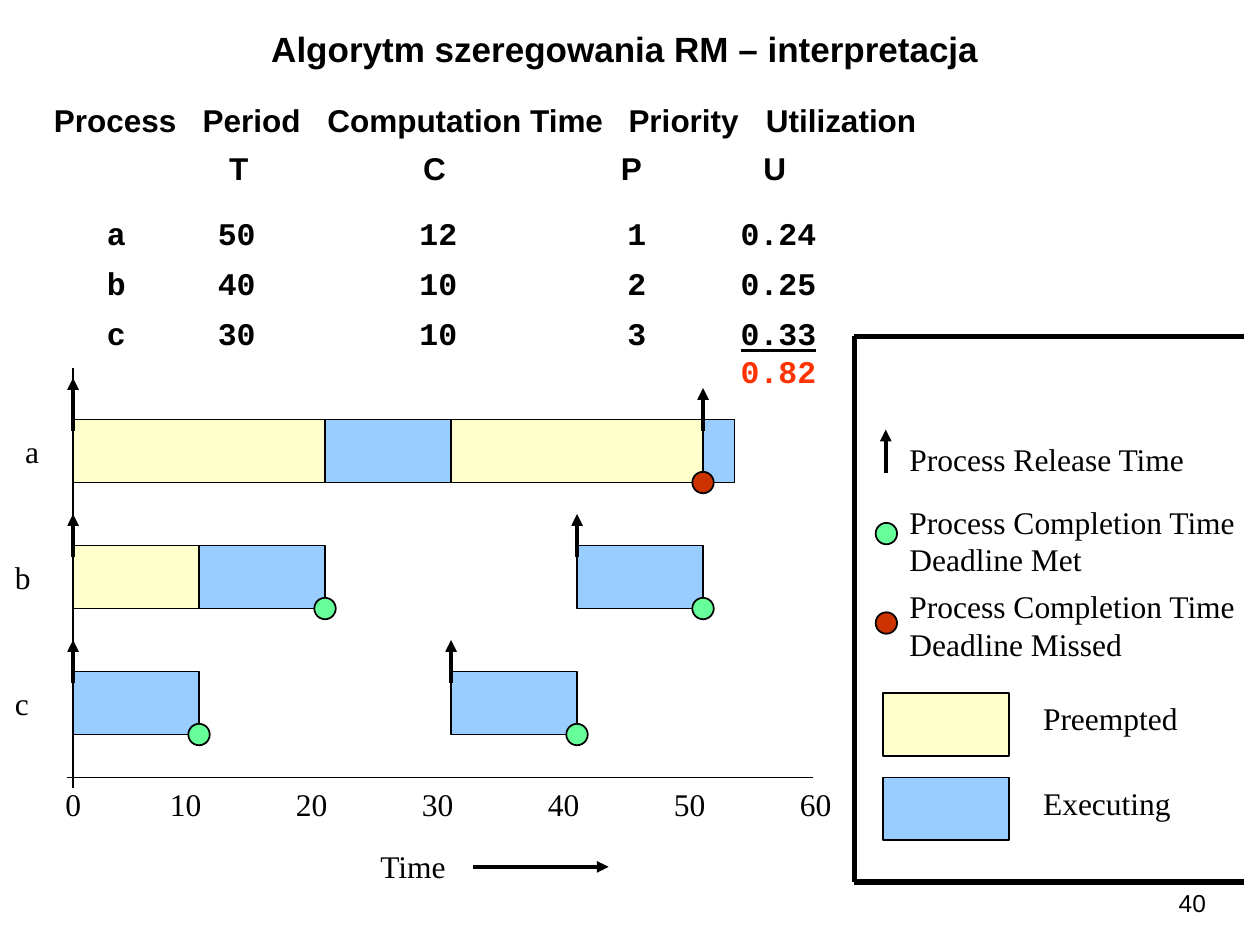
from lxml import etree
from pptx import Presentation
from pptx import util as u
from pptx.dml.color import RGBColor
from pptx.enum import shapes, text
from pptx.oxml.ns import qn

COLORS = {
    "ink": "000000",
    "preempted": "FFFFCC",
    "executing": "99CCFF",
    "met": "66FF99",
    "missed": "CC3300",
    "total": "FF3300",
}
SERIF, SANS, MONO = "Times New Roman", "Arial", "Courier New"
ORIGIN = 0.58
BAR_HEIGHT = 0.5
DOT_SIZE = 0.17
ROWS = {"a": 3.33, "b": 4.33, "c": 5.33}
BARS = [
    ("a", 0, 20, "preempted"),
    ("a", 20, 10, "executing"),
    ("a", 30, 20, "preempted"),
    ("a", 50, 2.5, "executing"),
    ("b", 0, 10, "preempted"),
    ("b", 10, 10, "executing"),
    ("b", 40, 10, "executing"),
    ("c", 0, 10, "executing"),
    ("c", 30, 10, "executing"),
]
RELEASES = [("a", 0), ("a", 50), ("b", 0), ("b", 40), ("c", 0), ("c", 30)]
COMPLETIONS = [
    ("a", 50, "missed"),
    ("b", 20, "met"),
    ("b", 50, "met"),
    ("c", 10, "met"),
    ("c", 40, "met"),
]
HEADING_STOPS = [1.18, 2.17, 4.56, 5.65]
SYMBOL_STOPS = [1.39, 2.93, 4.5, 5.63]
VALUE_STOPS = [0.42, 1.3, 2.9, 4.55, 5.45]
PROCESS_TABLE = [
    ("Process\tPeriod\tComputation Time\tPriority\tUtilization", SANS, 0, HEADING_STOPS),
    ("\tT\tC\tP\tU", SANS, 6, SYMBOL_STOPS),
    ("\ta\t50\t12\t1\t0.24", MONO, 15.5, VALUE_STOPS),
    ("\tb\t40\t10\t2\t0.25", MONO, 7, VALUE_STOPS),
    ("\tc\t30\t10\t3\t", MONO, 7, VALUE_STOPS),
    ("\t0.82", MONO, 0, VALUE_STOPS[-1:]),
]


def color(name):
    return RGBColor.from_string(COLORS[name])


def time_x(time):
    return ORIGIN + time / 10


def style(paragraph, font=SERIF, size=18, bold=False, ink="ink"):
    paragraph.font.name = font
    paragraph.font.size = u.Pt(size)
    paragraph.font.bold = bold
    paragraph.font.color.rgb = color(ink)


def add_text(slide, lines, left, top, width, height=0.4, wrap=False, align=None, **font):
    box = slide.shapes.add_textbox(*map(u.Inches, (left, top, width, height)))
    frame = box.text_frame
    frame.word_wrap = wrap
    frame.text = lines
    for paragraph in frame.paragraphs:
        paragraph.alignment = align
        style(paragraph, **font)
    return frame


def add_figure(slide, kind, left, top, width, height, fill):
    shape = slide.shapes.add_shape(kind, *map(u.Inches, (left, top, width, height)))
    shape.shadow.inherit = False
    shape.fill.solid()
    shape.fill.fore_color.rgb = color(fill)
    shape.line.color.rgb = color("ink")
    shape.line.width = u.Pt(1)


def add_bar(slide, left, top, width, fill):
    add_figure(slide, shapes.MSO_SHAPE.RECTANGLE, left, top, width, BAR_HEIGHT, fill)


def add_dot(slide, left, top, fill):
    add_figure(slide, shapes.MSO_SHAPE.OVAL, left, top, DOT_SIZE, DOT_SIZE, fill)


def add_line(slide, x1, y1, x2, y2, width, arrow=False):
    line = slide.shapes.add_connector(
        shapes.MSO_CONNECTOR.STRAIGHT, *map(u.Inches, (x1, y1, x2, y2)))
    line.line.color.rgb = color("ink")
    line.line.width = u.Pt(width)
    if arrow:
        etree.SubElement(line.line._get_or_add_ln(), qn("a:tailEnd"), type="triangle")
    etree.SubElement(line._element.spPr, qn("a:effectLst"))


def add_release(slide, x, bottom, height=0.34):
    add_line(slide, x, bottom, x, bottom - height, 2.25, arrow=True)


def set_tab_stops(paragraph, stops):
    tab_list = etree.SubElement(paragraph._p.get_or_add_pPr(), qn("a:tabLst"))
    for stop in stops:
        etree.SubElement(tab_list, qn("a:tab"), pos=str(u.Inches(stop)), algn="l")


def add_process_table(slide):
    lines = "\n".join(row[0] for row in PROCESS_TABLE)
    frame = add_text(slide, lines, 0.33, 0.75, 7.08, 2.39, wrap=True)
    for paragraph, (_, font, space, stops) in zip(frame.paragraphs, PROCESS_TABLE):
        paragraph.space_before = u.Pt(space)
        set_tab_stops(paragraph, stops)
        style(paragraph, font, bold=True)
    last_value = frame.paragraphs[-2].add_run()
    last_value.text = "0.33"
    last_value.font.underline = True
    style(frame.paragraphs[-1], MONO, bold=True, ink="total")


def add_timeline(slide):
    for row, start, length, fill in BARS:
        add_bar(slide, time_x(start), ROWS[row], length / 10, fill)
    for time in range(0, 70, 10):
        add_text(slide, str(time), 0.25 + time / 10 if time else 0.42, 6.18,
                 0.45 if time else 0.33)
    for row, top in ROWS.items():
        add_text(slide, row, 0.1 if row == "a" else 0.02, top + 0.05, 0.32)
    for row, time in RELEASES:
        height = 0.42 if (row, time) == ("a", 0) else 0.34
        add_release(slide, time_x(time), ROWS[row] + 0.09, height)
    for row, time, fill in COMPLETIONS:
        add_dot(slide, time_x(time) - DOT_SIZE / 2,
                ROWS[row] + BAR_HEIGHT - DOT_SIZE / 2, fill)
    add_line(slide, 0.53, 6.17, 6.45, 6.17, 1)
    add_line(slide, ORIGIN, 6.25, ORIGIN, 2.92, 0.75)
    add_text(slide, "Time", 2.92, 6.67, 0.73)
    add_line(slide, 3.75, 6.88, 4.83, 6.88, 2.25, arrow=True)


def add_legend(slide):
    add_release(slide, 7.03, 3.75)
    add_text(slide, "Process Release Time", 7.12, 3.44, 2.4)
    for outcome, fill, dot_top, text_top in (
            ("Met", "met", 4.15, 3.94), ("Missed", "missed", 4.86, 4.61)):
        add_dot(slide, 6.95, dot_top, fill)
        add_text(slide, f"Process Completion Time\nDeadline {outcome}",
                 7.12, text_top, 2.8, 0.7)
    for label, fill, top, width in (
            ("Preempted", "preempted", 5.5, 1.27), ("Executing", "executing", 6.17, 1.22)):
        add_bar(slide, 7.01, top, 1, fill)
        add_text(slide, label, 8.18, top, width)
    for y in (2.67, 7):
        add_line(slide, 9.87, y, 6.78, y, 3)
    add_line(slide, 6.78, 2.67, 6.78, 7, 3)


def main():
    presentation = Presentation()
    presentation.slide_width = u.Inches(10)
    presentation.slide_height = u.Inches(7.5)
    slide = presentation.slides.add_slide(presentation.slide_layouts[6])
    add_text(slide, "Algorytm szeregowania RM – interpretacja", 0.25, 0.17, 9.42, 0.43,
             wrap=True, align=text.PP_ALIGN.CENTER, font=SANS, size=20, bold=True)
    add_process_table(slide)
    add_timeline(slide)
    add_legend(slide)
    add_text(slide, "40", 8.75, 7, 0.92, 0.33, wrap=True,
             align=text.PP_ALIGN.RIGHT, font=SANS, size=14)
    presentation.save("out.pptx")


if __name__ == "__main__":
    main()
